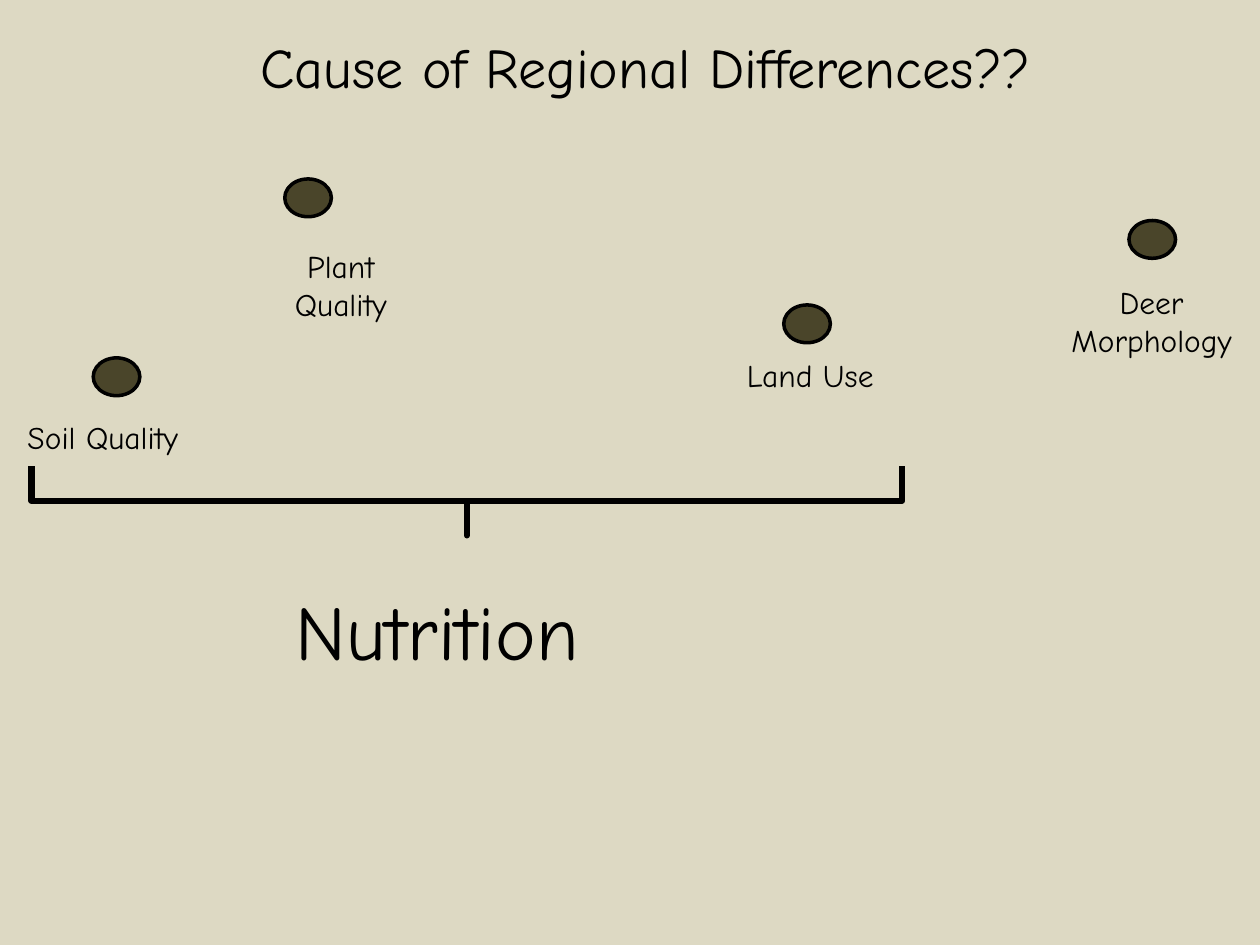
from typing import NamedTuple

from pptx import Presentation
from pptx.dml.color import RGBColor
from pptx.enum import shapes, text
from pptx.util import Inches, Pt

COLS, ROWS = 100, 75
FONT, INK, SAND, OLIVE = "Comic Neue", "000000", "DDD9C3", "4A452A"


class Box(NamedTuple):
    """A place on the grid, in columns and rows."""
    col: float
    row: float
    cols: float
    rows: float


class Factor(NamedTuple):
    """A dot and the label below it."""
    label: str
    dot: tuple[float, float]
    box: Box
    centred: bool = False


FACTORS = [
    Factor("Deer\nMorphology", (89.6, 17.5), Box(83.6, 22, 15.6, 7.1), True),
    Factor("Plant\nQuality", (22.6, 14.2), Box(21.7, 19.1, 10.7, 7.1), True),
    Factor("Land Use", (62.2, 24.2), Box(58.3, 27.8, 12.7, 4)),
    Factor("Soil Quality", (7.4, 28.4), Box(1.2, 32.7, 16, 4)),
]

prs = Presentation()
prs.slide_width, prs.slide_height = Inches(10), Inches(7.5)
s = prs.slides.add_slide(prs.slide_layouts[6])


def rgb(value: str) -> RGBColor:
    """Turn a hex string into a colour."""
    return RGBColor.from_string(value)


def place(box: Box) -> list[int]:
    """Turn a grid box into left, top, width and height."""
    x, y = prs.slide_width / COLS, prs.slide_height / ROWS
    return [round(n * unit) for n, unit in zip(box, (x, y, x, y))]


def add_text(words: str, box: Box, *, size: float = 18,
             centred: bool = False, wrap: bool = False) -> None:
    """Add a text box with one paragraph per line."""
    tf = s.shapes.add_textbox(*place(box)).text_frame
    tf.word_wrap = wrap
    tf.auto_size = text.MSO_AUTO_SIZE.SHAPE_TO_FIT_TEXT
    tf.text = words
    for p in tf.paragraphs:
        p.alignment = text.PP_ALIGN.CENTER if centred else text.PP_ALIGN.LEFT
        for r in p.runs:
            r.font.name, r.font.size = FONT, Pt(size)
            r.font.color.rgb = rgb(INK)


def add_outlined(kind: shapes.MSO_SHAPE, box: Box, *, line: float,
                 turn: float, fill: str | None = None):
    """Add a rotated preset shape with a dark outline."""
    sp = s.shapes.add_shape(kind, *place(box))
    sp.shadow.inherit = False
    sp.rotation = turn
    sp.line.color.rgb, sp.line.width = rgb(INK), Pt(line)
    if fill:
        sp.fill.solid()
        sp.fill.fore_color.rgb = rgb(fill)
    else:
        sp.fill.background()
    return sp


def main() -> None:
    """Build and save the slide."""
    s.background.fill.solid()
    s.background.fill.fore_color.rgb = rgb(SAND)
    add_text("Cause of Regional Differences??", Box(7.1, 2.1, 88.3, 11.8),
             size=32, centred=True, wrap=True)
    for factor in FACTORS:
        add_outlined(shapes.MSO_SHAPE.FLOWCHART_CONNECTOR,
                     Box(*factor.dot, 3.7, 3), line=2, turn=180, fill=OLIVE)
        add_text(factor.label, factor.box, centred=factor.centred)
    add_text("Nutrition", Box(22.5, 45.8, 28.9, 8.4), size=44)
    brace = add_outlined(shapes.MSO_SHAPE.RIGHT_BRACE,
                         Box(34.3, 5.2, 5.5, 69.1), line=3.5, turn=90)
    brace.adjustments[0], brace.adjustments[1] = 0, 0.5
    prs.save("out.pptx")


if __name__ == "__main__":
    main()
